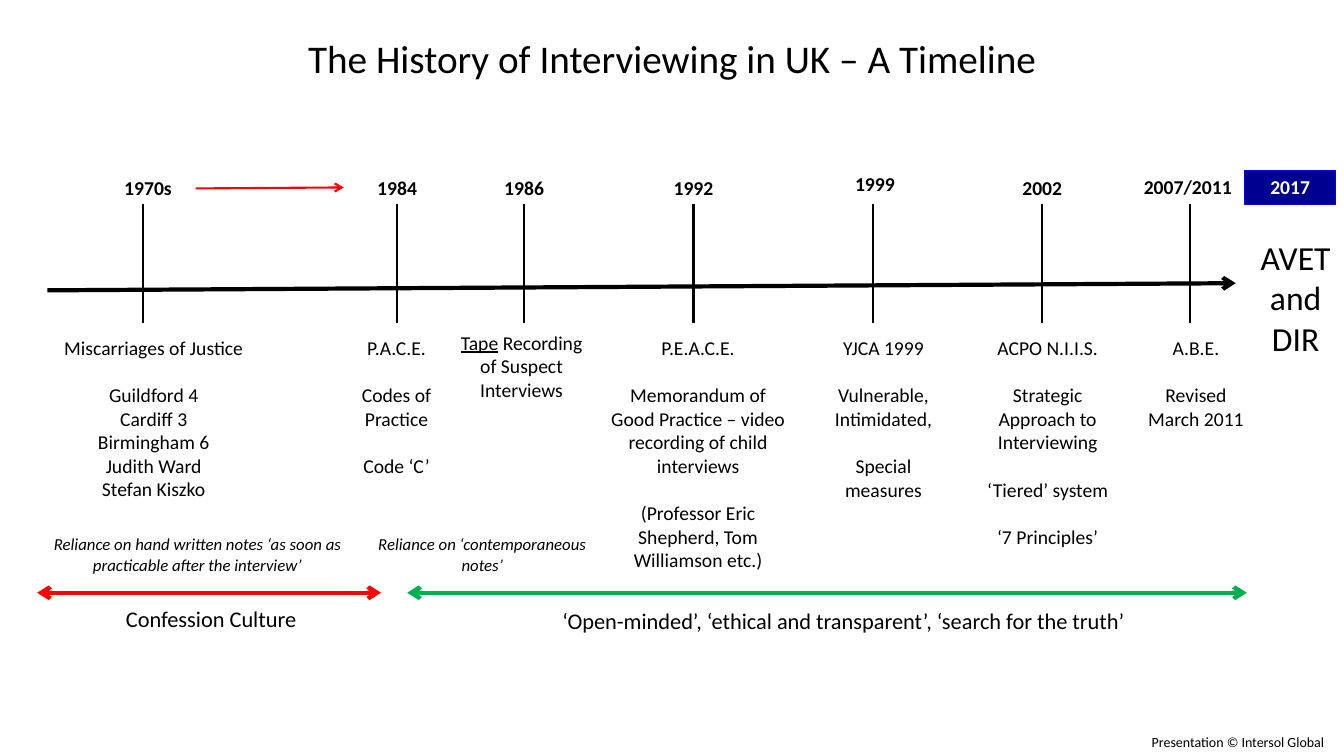
import pptx
import pptx.dml.color
import pptx.enum.shapes
import pptx.enum.text
import pptx.oxml.ns
import pptx.util
from lxml import etree

Pt = pptx.util.Pt
RGBColor = pptx.dml.color.RGBColor

FONT = "Calibri"
BLACK = RGBColor(0x00, 0x00, 0x00)
WHITE = RGBColor(0xFF, 0xFF, 0xFF)
RED = RGBColor(0xFF, 0x00, 0x00)
GREEN = RGBColor(0x00, 0xB0, 0x50)
NAVY = RGBColor(0x00, 0x00, 0x90)
BLUE = RGBColor(0x00, 0x00, 0xFF)

GROUP_GAP = 17.1
TICK_TOP, TICK_BOTTOM = 145.4, 230.4
YEAR_HEIGHT = 24.2

# Tick x, year, (year centre, top, width), detail box, detail groups.
# A group is a list of paragraphs; a paragraph is text or (text, underline) runs.
EVENTS = [
    (102.2, "1970s", (105.8, 122.4, 67.7), (11.5, 236.2, 196.6, 126),
     [["Miscarriages of Justice"],
      ["Guildford 4", "Cardiff 3", "Birmingham 6", "Judith Ward", "Stefan Kiszko"]]),
    (283.7, "1984", (283.7, 122.4, 60.5), (230.4, 236.2, 105.8, 108.7),
     [["P.A.C.E."], ["Codes of Practice"], ["Code ‘C’"]]),
    (374.4, "1986", (374.4, 122.4, 60.5), (316.1, 232.6, 113, 58.3),
     [[[("Tape", True), (" Recording of Suspect Interviews", False)]]]),
    (495.4, "1992", (495.4, 122.4, 60.5), (427, 236.2, 143.3, 177.1),
     [["P.E.A.C.E."],
      ["Memorandum of Good Practice – video recording of child interviews"],
      ["(Professor Eric Shepherd, Tom Williamson etc.)"]]),
    (623.5, "1999", (625, 119.5, 60.5), (578.2, 236.2, 105.8, 126),
     [["YJCA 1999"], ["Vulnerable, Intimidated,"], ["Special measures"]]),
    (744.5, "2002", (744.5, 122.4, 60.5), (691.9, 236.2, 113, 159.8),
     [["ACPO N.I.I.S."], ["Strategic Approach to Interviewing"],
      ["‘Tiered’ system"], ["‘7 Principles’"]]),
    (850.3, "2007/2011", (848.5, 121.7, 105.8), (812.9, 236.2, 82.8, 74.9),
     [["A.B.E."], ["Revised March 2011"]]),
]

# Text, box, size, italic.
CAPTIONS = [
    ("The History of Interviewing in UK – A Timeline", (0, 20.9, 960, 41), 28, False),
    ("Confession Culture", (33.8, 428.4, 234, 26.6), 16, False),
    ("‘Open-minded’, ‘ethical and transparent’, ‘search for the truth’",
     (296.6, 429.8, 612, 26.6), 16, False),
    ("AVET and DIR", (890.6, 165.6, 69.8, 94.3), 24, False),
    ("Presentation © Intersol Global", (808.6, 520.6, 151.2, 19.4), 10, False),
    ("Reliance on hand written notes ‘as soon as practicable after the interview’",
     (27.4, 378, 227.5, 36), 12, True),
    ("Reliance on ‘contemporaneous notes’", (255.6, 378, 177.8, 36), 12, True),
]

# Start, end, colour, width, line ends with arrowheads.
ARROWS = [
    ((33.8, 207.4), (882.7, 202.3), BLACK, 3, ["tailEnd"]),
    ((139.7, 134.6), (245.5, 133.9), RED, 1.5, ["tailEnd"]),
    ((26.6, 423.4), (272.2, 423.4), RED, 3, ["headEnd", "tailEnd"]),
    ((290.9, 423.4), (890.6, 423.4), GREEN, 3, ["headEnd", "tailEnd"]),
]


def fill_text(sp, groups, size, color=BLACK, bold=False, italic=False):
    """Write centred paragraphs, with a line's gap between groups."""
    tf = sp.text_frame
    tf.word_wrap = True
    tf.auto_size = pptx.enum.text.MSO_AUTO_SIZE.SHAPE_TO_FIT_TEXT
    tf.vertical_anchor = pptx.enum.text.MSO_ANCHOR.TOP
    p = None
    for group in groups:
        for i, runs in enumerate(group):
            gap = GROUP_GAP if p is not None and i == 0 else 0
            p = tf.paragraphs[0] if p is None else tf.add_paragraph()
            p.alignment = pptx.enum.text.PP_ALIGN.CENTER
            p.space_before = Pt(gap)
            if isinstance(runs, str):
                runs = [(runs, False)]
            for text, underline in runs:
                r = p.add_run()
                r.text = text
                r.font.name = FONT
                r.font.size = Pt(size)
                r.font.color.rgb = color
                r.font.bold = bold
                r.font.italic = italic
                r.font.underline = underline


def add_text(slide, box, groups, size, **style):
    sp = slide.shapes.add_textbox(*map(Pt, box))
    fill_text(sp, groups, size, **style)


def add_line(slide, start, end, color, width, heads=()):
    line = slide.shapes.add_connector(
        pptx.enum.shapes.MSO_CONNECTOR.STRAIGHT, *map(Pt, start + end))
    line.line.color.rgb = color
    line.line.width = Pt(width)
    qn = pptx.oxml.ns.qn
    ln = line.line._get_or_add_ln()
    for head in heads:
        etree.SubElement(ln, qn("a:" + head), type="arrow")
    etree.SubElement(line._element.spPr, qn("a:effectLst"))


def add_event(slide, x, year, year_place, detail_box, groups):
    """Draw a tick on the timeline with its year above and details below."""
    centre, top, width = year_place
    add_line(slide, (x, TICK_TOP), (x, TICK_BOTTOM), BLACK, 1.5)
    add_text(slide, (centre - width / 2, top, width, YEAR_HEIGHT),
             [[year]], 14, bold=True)
    add_text(slide, detail_box, groups, 14)


def add_badge(slide, box, text):
    sp = slide.shapes.add_shape(
        pptx.enum.shapes.MSO_SHAPE.RECTANGLE, *map(Pt, box))
    sp.shadow.inherit = False
    sp.fill.solid()
    sp.fill.fore_color.rgb = NAVY
    sp.line.color.rgb = BLUE
    sp.line.width = Pt(0.75)
    fill_text(sp, [[text]], 14, color=WHITE, bold=True)


def main():
    prs = pptx.Presentation()
    prs.slide_width, prs.slide_height = Pt(960), Pt(540)
    slide = prs.slides.add_slide(prs.slide_layouts[6])
    for arrow in ARROWS:
        add_line(slide, *arrow)
    for event in EVENTS:
        add_event(slide, *event)
    for text, box, size, italic in CAPTIONS:
        add_text(slide, box, [[text]], size, italic=italic)
    add_badge(slide, (889.2, 121.7, 64.8, YEAR_HEIGHT), "2017")
    prs.save("out.pptx")


if __name__ == "__main__":
    main()
